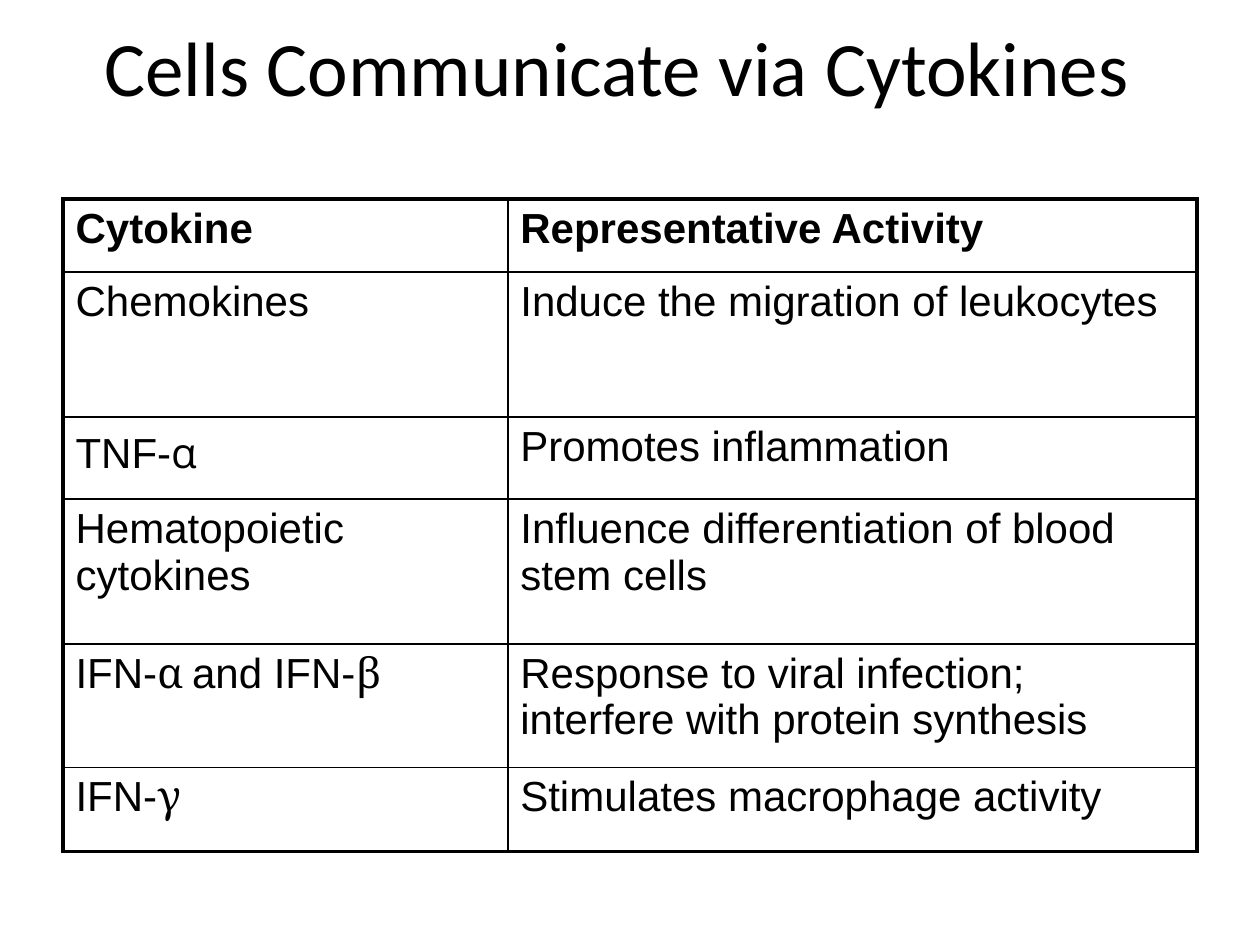
from lxml.etree import SubElement
from pptx import Presentation
from pptx.dml.color import RGBColor
from pptx.enum.text import MSO_ANCHOR, PP_ALIGN
from pptx.oxml.ns import qn
from pptx.util import Inches, Pt

TITLE = "Cells Communicate via Cytokines"
BLACK = "000000"
BODY_FONT = "Arial"
OUTER_LINE, INNER_LINE = 2.25, 1

# Each cell is a list of runs: (text, font)
ROWS = [
    ([("Cytokine", BODY_FONT)], [("Representative Activity", BODY_FONT)]),
    ([("Chemokines", BODY_FONT)],
     [("Induce the migration of leukocytes", BODY_FONT)]),
    ([("TNF-", BODY_FONT), ("α", "Open Sans")],
     [("Promotes inflammation", BODY_FONT)]),
    ([("Hematopoietic cytokines", BODY_FONT)],
     [("Influence differentiation of blood stem cells", BODY_FONT)]),
    ([("IFN-", BODY_FONT), ("α ", "Cambria"), ("and IFN-", BODY_FONT), ("β", "Cambria")],
     [("Response to viral infection; interfere with protein synthesis", BODY_FONT)]),
    ([("IFN-", BODY_FONT), ("γ", "Cambria")],
     [("Stimulates macrophage activity", BODY_FONT)]),
]
COLUMN_WIDTHS = [3.53, 5.47]
ROW_HEIGHTS = [0.58, 1.15, 0.65, 1.15, 0.98, 0.67]


def add_run(paragraph, text, color=BLACK, **font_format):
    run = paragraph.add_run()
    run.text = text
    run.font.color.rgb = RGBColor.from_string(color)
    for name, value in font_format.items():
        setattr(run.font, name, value)


def set_borders(cell, widths, color=BLACK):
    """Draw the cell's edges; widths are points, keyed L, R, T, B in schema order."""
    properties = cell._tc.get_or_add_tcPr()
    for position, (side, width) in enumerate(widths.items()):
        line = SubElement(properties, qn(f"a:ln{side}"), w=str(Pt(width)))
        fill = SubElement(line, qn("a:solidFill"))
        SubElement(fill, qn("a:srgbClr"), val=color)
        properties.insert(position, line)


def add_title(slide):
    title = slide.shapes.title
    box = {"left": 0.15, "top": 0.07, "width": 9.5, "height": 0.91}
    for name, value in box.items():
        setattr(title, name, Inches(value))
    title.text_frame.vertical_anchor = MSO_ANCHOR.MIDDLE
    paragraph = title.text_frame.paragraphs[0]
    paragraph.alignment = PP_ALIGN.CENTER
    add_run(paragraph, TITLE, name="Calibri", size=Pt(44))


def add_cytokine_table(slide):
    last_row, last_column = len(ROWS) - 1, len(COLUMN_WIDTHS) - 1
    table = slide.shapes.add_table(
        len(ROWS), len(COLUMN_WIDTHS), Inches(0.5), Inches(1.58),
        Inches(sum(COLUMN_WIDTHS)), Inches(sum(ROW_HEIGHTS))).table
    table.first_row = table.horz_banding = False
    for column, width in zip(table.columns, COLUMN_WIDTHS):
        column.width = Inches(width)
    for row, height in zip(table.rows, ROW_HEIGHTS):
        row.height = Inches(height)

    for r, activity in enumerate(ROWS):
        for c, runs in enumerate(activity):
            cell = table.cell(r, c)
            cell.fill.background()
            on_edge = {"L": c == 0, "R": c == last_column,
                       "T": r == 0, "B": r == last_row}
            set_borders(cell, {side: OUTER_LINE if edge else INNER_LINE
                               for side, edge in on_edge.items()})
            for text, font in runs:
                add_run(cell.text_frame.paragraphs[0], text,
                        name=font, size=Pt(24), bold=r == 0)


def main():
    deck = Presentation()
    deck.slide_width, deck.slide_height = Inches(10), Inches(7.5)
    slide = deck.slides.add_slide(deck.slide_layouts.get_by_name("Title Only"))
    add_title(slide)
    add_cytokine_table(slide)
    deck.save("out.pptx")


if __name__ == "__main__":
    main()
